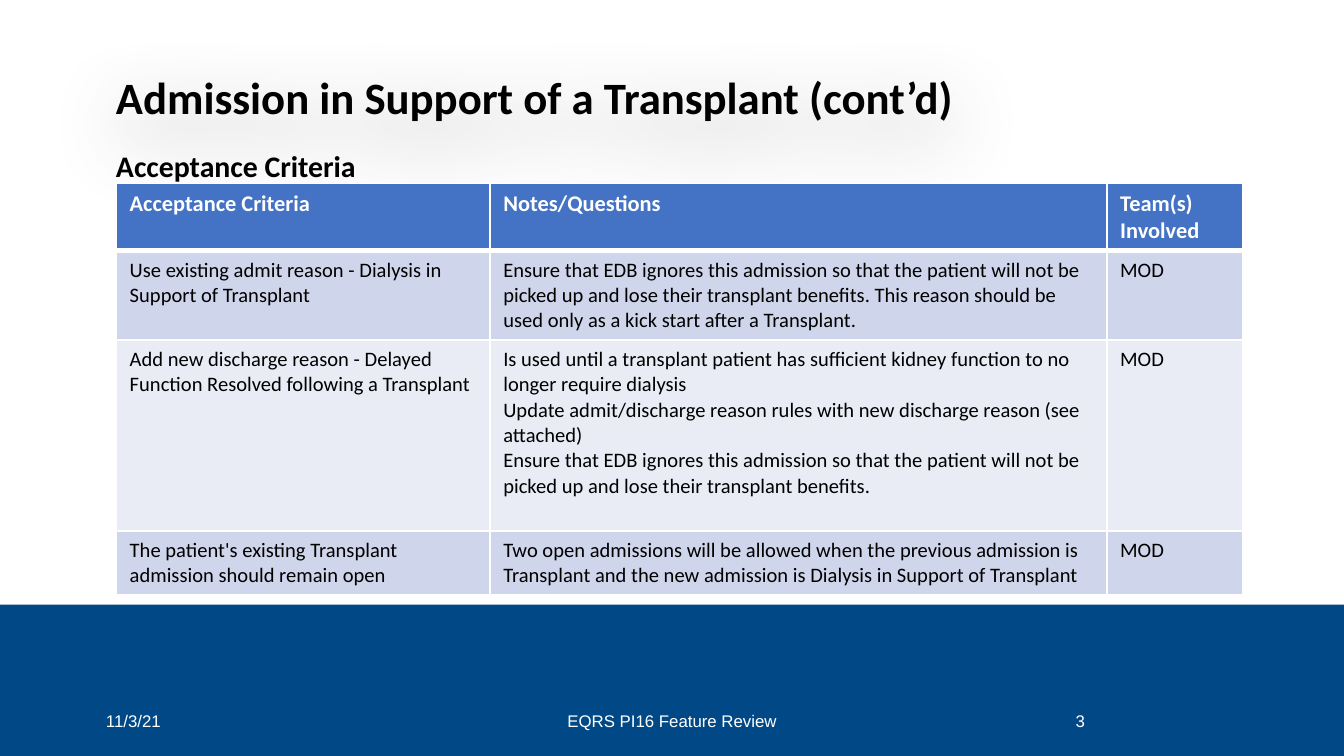
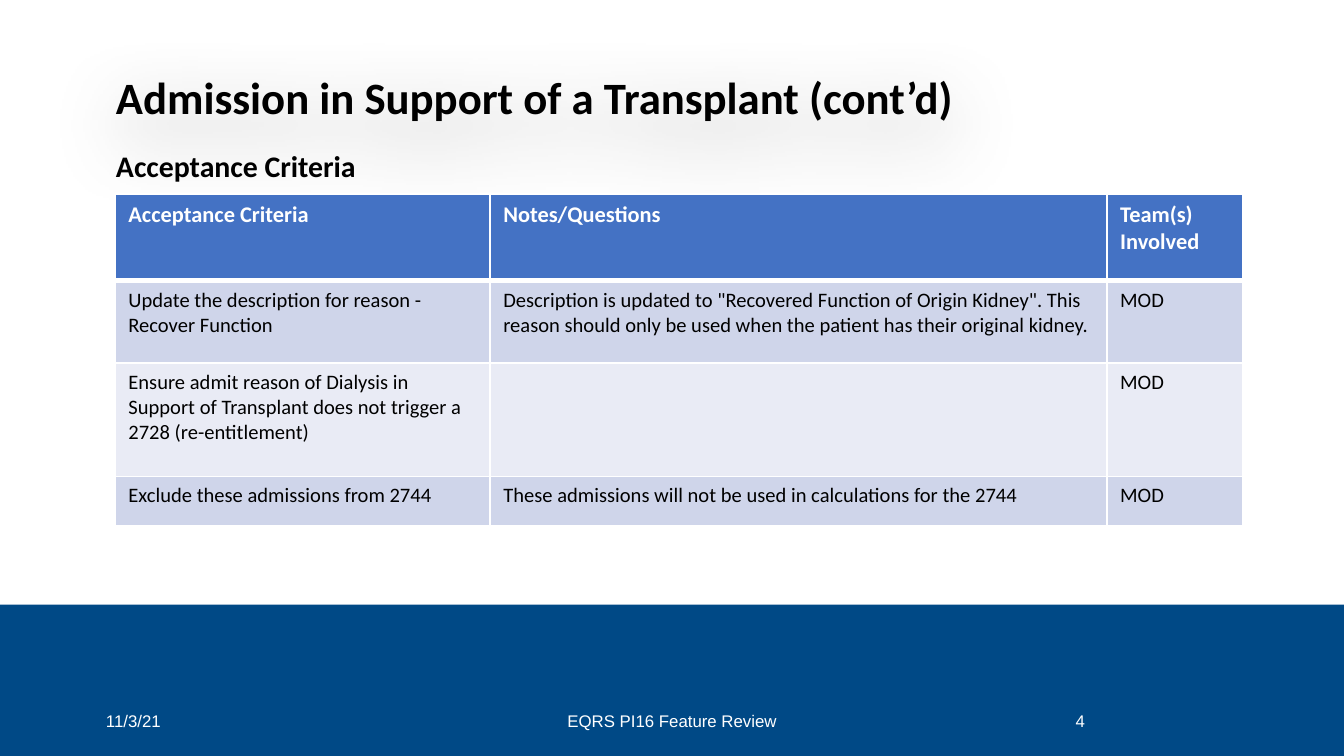
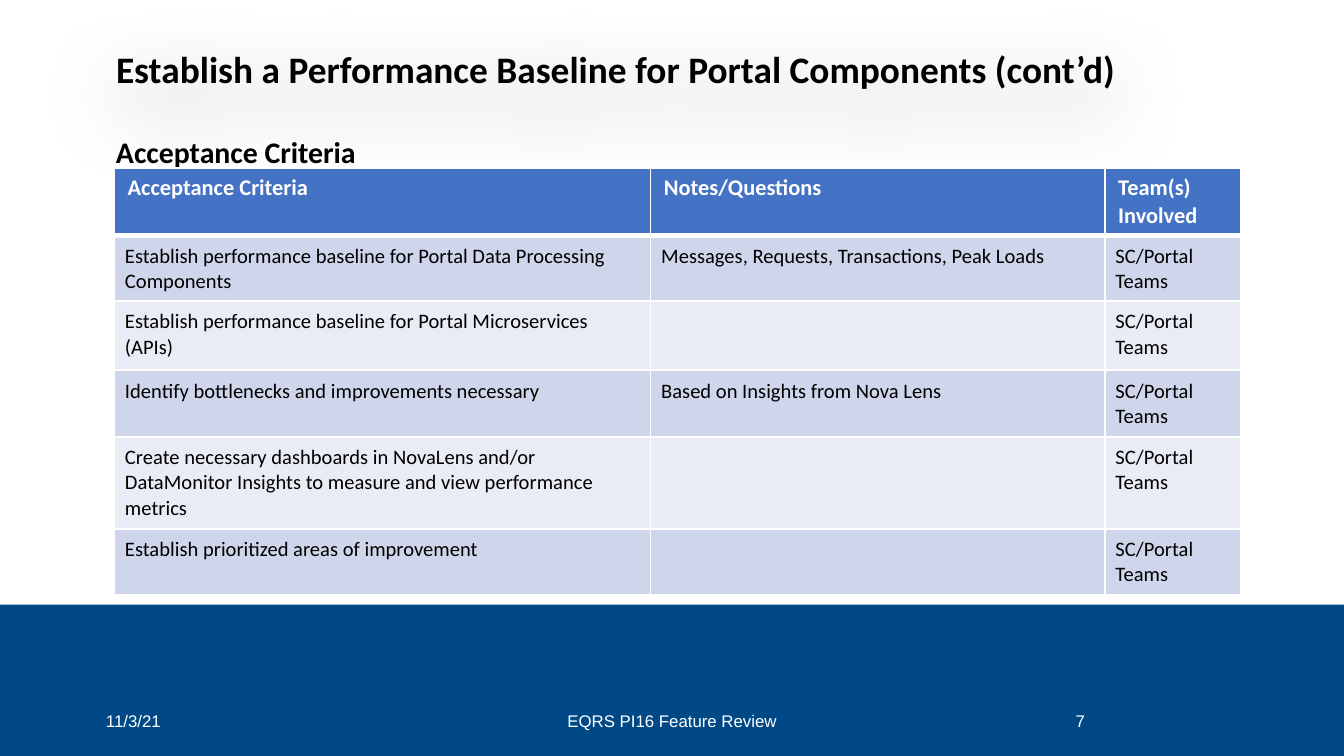
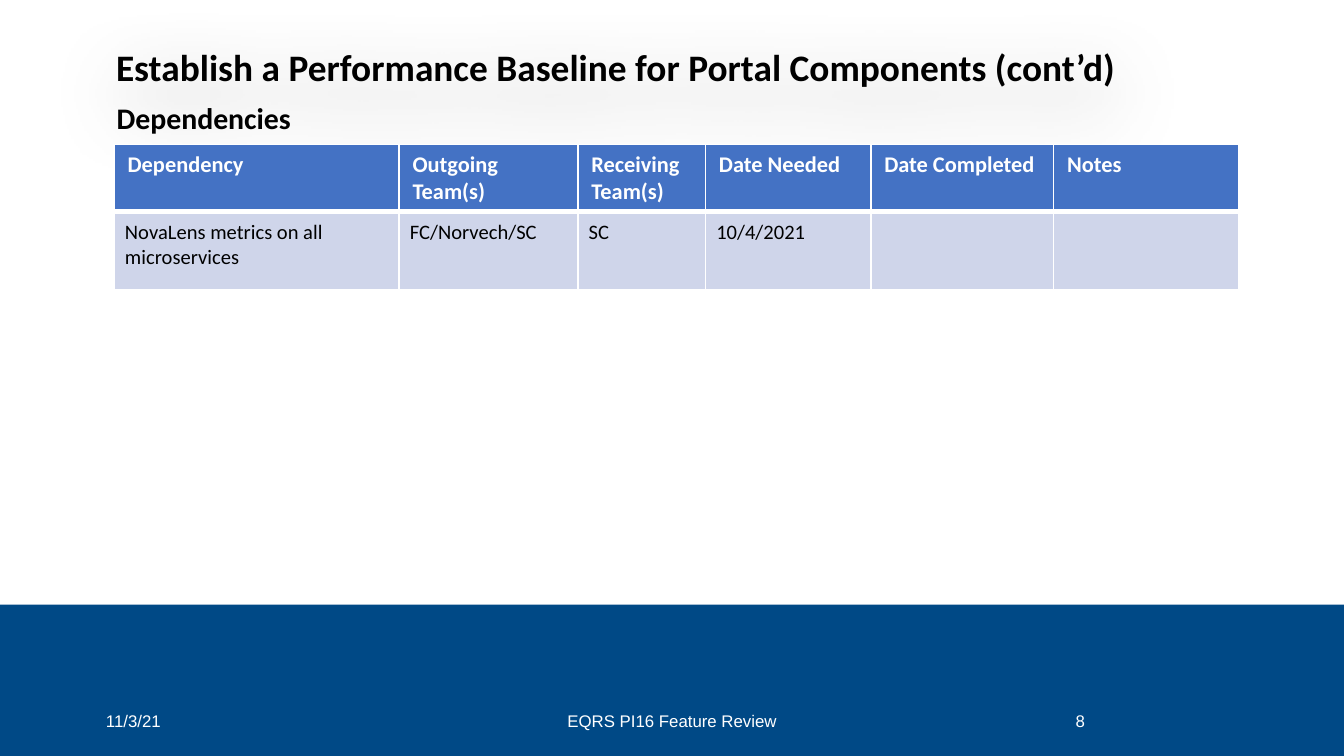
from dataclasses import dataclass

from lxml import etree
from pptx import Presentation
from pptx.dml.color import RGBColor
from pptx.enum.shapes import MSO_SHAPE
from pptx.enum.text import MSO_ANCHOR, PP_ALIGN
from pptx.oxml.ns import qn
from pptx.slide import Slide
from pptx.table import _Cell
from pptx.util import Pt

RECT = MSO_SHAPE.RECTANGLE
TOP, MIDDLE, BOTTOM = MSO_ANCHOR.TOP, MSO_ANCHOR.MIDDLE, MSO_ANCHOR.BOTTOM
LEFT, CENTER = PP_ALIGN.LEFT, PP_ALIGN.CENTER

EMU_PER_PX = 4572
SLIDE_W, SLIDE_H = 2000, 1125
BAND_TOP = 900

WHITE = RGBColor(0xFF, 0xFF, 0xFF)
BLACK = RGBColor(0x00, 0x00, 0x00)
NAVY = RGBColor(0x00, 0x49, 0x86)
HEADER_BLUE = RGBColor(0x44, 0x72, 0xC4)
ROW_DARK = RGBColor(0xCF, 0xD5, 0xEA)
ROW_LIGHT = RGBColor(0xE9, 0xEB, 0xF5)

HEADING_FONT, FOOTER_FONT = "Calibri", "Arial"
THIN, THICK = 1, 3


@dataclass(frozen=True)
class Box:
    x: int
    y: int
    w: int
    h: int


@dataclass(frozen=True)
class TextStyle:
    size: int
    color: RGBColor
    font: str = HEADING_FONT
    bold: bool = False
    align: PP_ALIGN = LEFT
    anchor: MSO_ANCHOR = TOP
    line_spacing: float = 1.0


@dataclass(frozen=True)
class Inset:
    x: int
    y: int


@dataclass(frozen=True)
class Grid:
    x: int
    y: int
    cols: list[int]
    rows: list[int]
    cells: list[list[str]]
    body_inset: Inset


@dataclass(frozen=True)
class Page:
    number: int
    title: str
    title_box: Box
    title_size: int
    subtitle: str
    subtitle_box: Box
    grid: Grid


SUBTITLE = TextStyle(16, BLACK, bold=True, line_spacing=0.9)
FOOTER = TextStyle(9, WHITE, FOOTER_FONT, anchor=MIDDLE)
FOOTER_CENTER = TextStyle(9, WHITE, FOOTER_FONT, align=CENTER, anchor=MIDDLE)
HEADER_CELL = TextStyle(12, WHITE, bold=True)
BODY_CELL = TextStyle(11, BLACK)

WIDE_INSET, NARROW_INSET = Inset(20, 10), Inset(16, 12)
CRITERIA_HEADER = ["Acceptance Criteria", "Notes/Questions", "Team(s) Involved"]
ADMISSION = "Admission in Support of a Transplant (cont’d)"
BASELINE = "Establish a Performance Baseline for Portal Components (cont’d)"
ADMISSION_BOX = Box(153, 72, 1500, 122)
PORTAL_TEAMS = "SC/Portal Teams"

PAGES = [
    Page(
        3, ADMISSION, ADMISSION_BOX, 24,
        "Acceptance Criteria", Box(153, 216, 1712, 668),
        Grid(173, 273, [556, 918, 202], [99, 133, 284, 95], [
            CRITERIA_HEADER,
            ["Use existing admit reason - Dialysis in Support of Transplant",
             "Ensure that EDB ignores this admission so that the patient will not "
             "be picked up and lose their transplant benefits. This reason should "
             "be used only as a kick start after a Transplant.",
             "MOD"],
            ["Add new discharge reason - Delayed Function Resolved following a "
             "Transplant",
             "Is used until a transplant patient has sufficient kidney function "
             "to no longer require dialysis\n"
             "Update admit/discharge reason rules with new discharge reason "
             "(see attached)\n"
             "Ensure that EDB ignores this admission so that the patient will not "
             "be picked up and lose their transplant benefits.",
             "MOD"],
            ["The patient's existing Transplant admission should remain open",
             "Two open admissions will be allowed when the previous admission is "
             "Transplant and the new admission is Dialysis in Support of Transplant",
             "MOD"],
        ], WIDE_INSET),
    ),
    Page(
        4, ADMISSION, ADMISSION_BOX, 24,
        "Acceptance Criteria", Box(153, 216, 1712, 644),
        Grid(171, 289, [558, 918, 202], [129, 122, 169, 73], [
            CRITERIA_HEADER,
            ["Update the description for reason - Recover Function",
             "Description is updated to \"Recovered Function of Origin Kidney\". "
             "This reason should only be used when the patient has their original "
             "kidney.",
             "MOD"],
            ["Ensure admit reason of Dialysis in Support of Transplant does not "
             "trigger a 2728 (re-entitlement)",
             "",
             "MOD"],
            ["Exclude these admissions from 2744",
             "These admissions will not be used in calculations for the 2744",
             "MOD"],
        ], WIDE_INSET),
    ),
    Page(
        7, BASELINE, Box(153, 42, 1676, 104), 20,
        "Acceptance Criteria", Box(153, 195, 1712, 688),
        Grid(170, 250, [798, 676, 202], [98, 98, 103, 99, 137, 98], [
            CRITERIA_HEADER,
            ["Establish performance baseline for Portal Data Processing Components",
             "Messages, Requests, Transactions, Peak Loads",
             PORTAL_TEAMS],
            ["Establish performance baseline for Portal Microservices (APIs)",
             "",
             PORTAL_TEAMS],
            ["Identify bottlenecks and improvements necessary",
             "Based on Insights from Nova Lens",
             PORTAL_TEAMS],
            ["Create necessary dashboards in NovaLens and/or DataMonitor Insights "
             "to measure and view performance metrics",
             "",
             PORTAL_TEAMS],
            ["Establish prioritized areas of improvement", "", PORTAL_TEAMS],
        ], NARROW_INSET),
    ),
    Page(
        8, BASELINE, Box(153, 42, 1676, 101), 20,
        "Dependencies", Box(154, 144, 1712, 720),
        Grid(170, 215, [424, 266, 190, 246, 272, 276], [98, 116], [
            ["Dependency", "Outgoing Team(s)", "Receiving Team(s)",
             "Date Needed", "Date Completed", "Notes"],
            ["NovaLens metrics on all microservices", "FC/Norvech/SC", "SC",
             "10/4/2021", "", ""],
        ], NARROW_INSET),
    ),
]


def px(n: int) -> int:
    return n * EMU_PER_PX


def place(box: Box) -> tuple[int, int, int, int]:
    return px(box.x), px(box.y), px(box.w), px(box.h)


def write(tf, text: str, style: TextStyle) -> None:
    for i, line in enumerate(text.split("\n")):
        p = tf.add_paragraph() if i else tf.paragraphs[0]
        p.alignment = style.align
        p.line_spacing = style.line_spacing
        if line:
            r = p.add_run()
            r.text = line
            r.font.name = style.font
            r.font.size = Pt(style.size)
            r.font.bold = style.bold
            r.font.color.rgb = style.color


def add_text(s: Slide, box: Box, text: str, style: TextStyle):
    sp = s.shapes.add_textbox(*place(box))
    tf = sp.text_frame
    tf.word_wrap = True
    tf.vertical_anchor = style.anchor
    write(tf, text, style)
    return sp


def add_soft_shadow(sp, blur: int, distance: int, opacity: int) -> None:
    effects = etree.SubElement(sp._element.spPr, qn("a:effectLst"))
    shadow = etree.SubElement(
        effects, qn("a:outerShdw"), blurRad=str(px(blur)), dist=str(px(distance)),
        dir="5400000", algn="t", rotWithShape="0")
    color = etree.SubElement(shadow, qn("a:srgbClr"), val=str(BLACK))
    etree.SubElement(color, qn("a:alpha"), val=str(opacity * 1000))


def add_borders(cell: _Cell, top: int, bottom: int) -> None:
    tcPr = cell._tc.get_or_add_tcPr()
    widths = {"a:lnL": THIN, "a:lnR": THIN, "a:lnT": top, "a:lnB": bottom}
    for tag, width in widths.items():
        ln = etree.SubElement(tcPr, qn(tag), w=str(Pt(width)))
        fill = etree.SubElement(ln, qn("a:solidFill"))
        etree.SubElement(fill, qn("a:srgbClr"), val=str(WHITE))


def add_grid(s: Slide, grid: Grid) -> None:
    box = Box(grid.x, grid.y, sum(grid.cols), sum(grid.rows))
    table = s.shapes.add_table(len(grid.rows), len(grid.cols[:]), *place(box)).table
    table.first_row = False
    table.horz_banding = False
    for column, width in zip(table.columns, grid.cols):
        column.width = px(width)
    for row, height in zip(table.rows, grid.rows):
        row.height = px(height)
    for i, texts in enumerate(grid.cells):
        is_header = i == 0
        style = HEADER_CELL if is_header else BODY_CELL
        inset = WIDE_INSET if is_header else grid.body_inset
        fill = HEADER_BLUE if is_header else ROW_DARK if i % 2 else ROW_LIGHT
        for j, text in enumerate(texts):
            cell = table.cell(i, j)
            cell.margin_left = cell.margin_right = px(inset.x)
            cell.margin_top = cell.margin_bottom = px(inset.y)
            add_borders(cell, THICK if i == 1 else THIN, THICK if is_header else THIN)
            cell.fill.solid()
            cell.fill.fore_color.rgb = fill
            write(cell.text_frame, text, style)


def add_band(s: Slide) -> None:
    band = Box(0, BAND_TOP, SLIDE_W, SLIDE_H - BAND_TOP)
    sp = s.shapes.add_shape(RECT, *place(band))
    sp.shadow.inherit = False
    sp.fill.solid()
    sp.fill.fore_color.rgb = NAVY
    sp.line.fill.background()


def add_footer(s: Slide, number: int) -> None:
    add_text(s, Box(138, 1043, 450, 60), "11/3/21", FOOTER)
    add_text(s, Box(662, 1043, 676, 60), "EQRS PI16 Feature Review", FOOTER_CENTER)
    add_text(s, Box(1581, 1043, 76, 60), str(number), FOOTER)


def add_page(prs, page: Page) -> None:
    s = prs.slides.add_slide(prs.slide_layouts[6])
    s.background.fill.solid()
    s.background.fill.fore_color.rgb = WHITE
    add_band(s)
    title_style = TextStyle(page.title_size, BLACK, bold=True, anchor=BOTTOM,
                            line_spacing=0.9)
    title = add_text(s, page.title_box, page.title, title_style)
    add_soft_shadow(title, blur=120, distance=34, opacity=40)
    add_text(s, page.subtitle_box, page.subtitle, SUBTITLE)
    add_footer(s, page.number)
    add_grid(s, page.grid)


def main() -> None:
    prs = Presentation()
    prs.slide_width, prs.slide_height = px(SLIDE_W), px(SLIDE_H)
    for page in PAGES:
        add_page(prs, page)
    prs.save("out.pptx")


if __name__ == "__main__":
    main()
